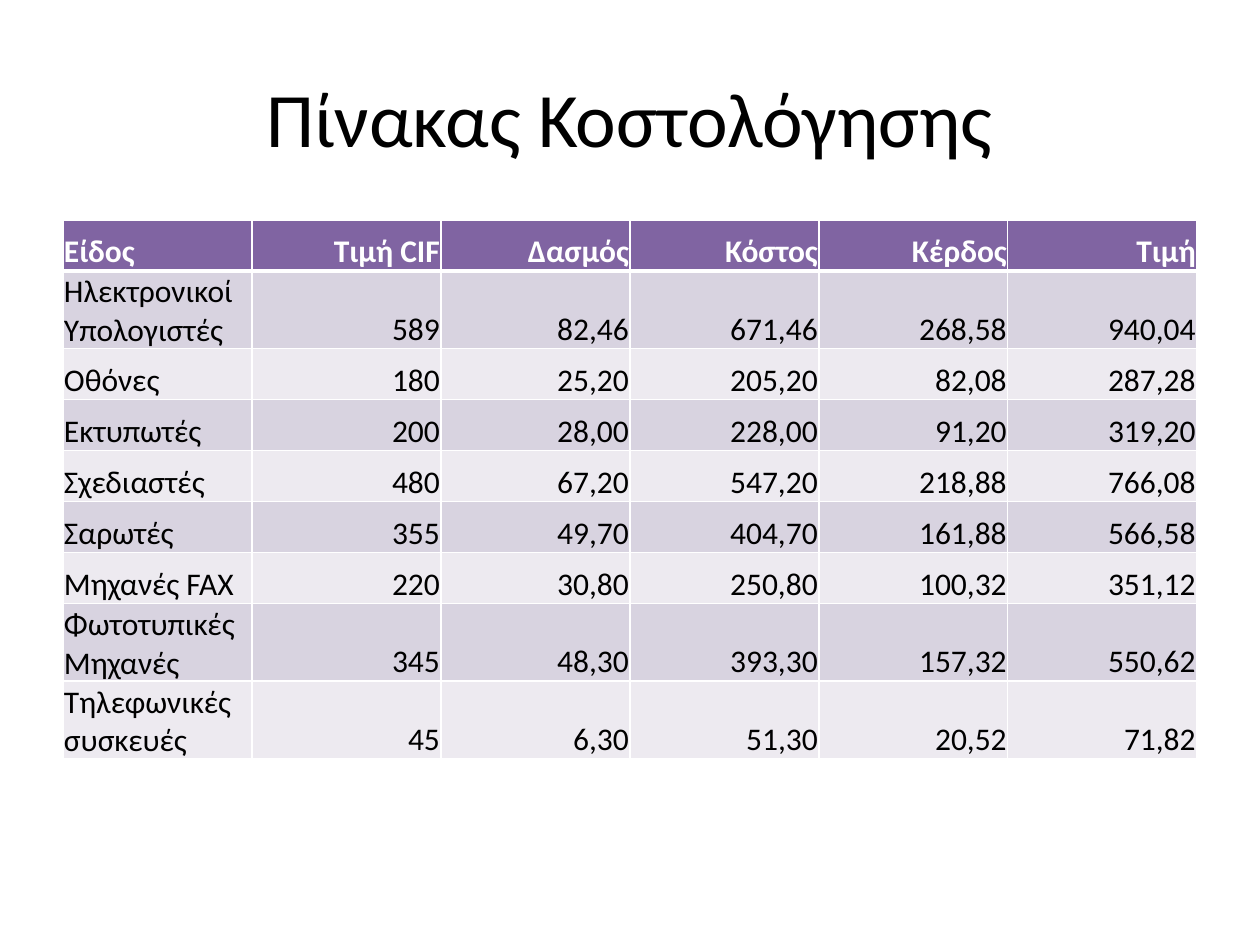
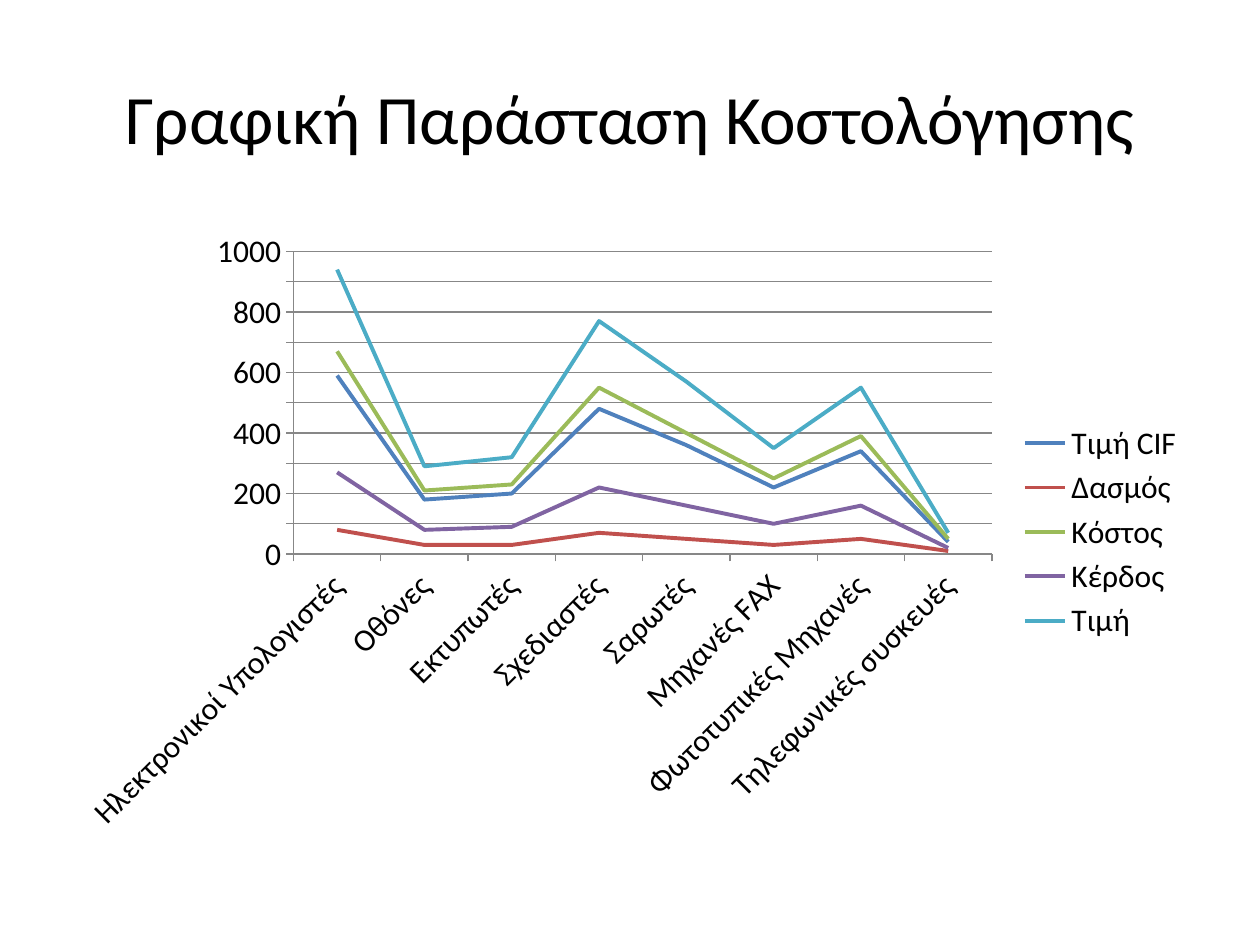
import pptx
import pptx.chart.data
import pptx.dml.color
import pptx.enum.chart
import pptx.enum.text
import pptx.oxml
import pptx.oxml.ns
import pptx.util

# Content
TABLE_TITLE = ("Πίνακας Κοστολόγησης", 44)
CHART_TITLE = ("Γραφική Παράσταση Κοστολόγησης", 39.6)
HEADERS = ["Είδος", "Τιμή CIF", "Δασμός", "Κόστος", "Κέρδος", "Τιμή"]
ITEMS = [
    ("Ηλεκτρονικοί Υπολογιστές", 589, 82.46, 671.46, 268.58, 940.04),
    ("Οθόνες", 180, 25.20, 205.20, 82.08, 287.28),
    ("Εκτυπωτές", 200, 28.00, 228.00, 91.20, 319.20),
    ("Σχεδιαστές", 480, 67.20, 547.20, 218.88, 766.08),
    ("Σαρωτές", 355, 49.70, 404.70, 161.88, 566.58),
    ("Μηχανές FAX", 220, 30.80, 250.80, 100.32, 351.12),
    ("Φωτοτυπικές Μηχανές", 345, 48.30, 393.30, 157.32, 550.62),
    ("Τηλεφωνικές συσκευές", 45, 6.30, 51.30, 20.52, 71.82),
]

# Shared style, lengths in px
FONT = "Calibri"
BLACK, WHITE, GRID = "000000", "FFFFFF", "878787"
HEAD_FILL, BANDS = "8064A2", ("D8D3E0", "EDEAF0")
SERIES_COLORS = ["4F81BD", "C0504D", "9BBB59", "8064A2", "4BACC6"]
PX = 914400 // 126
LEFT, WIDTH = 63, 1134
TITLE_TOP, TITLE_H = 38, 157
BODY_TOP, ROW_H, CHART_H = 220, 51, 624


def px(n):
    return pptx.util.Emu(n * PX)


def rgb(color):
    return pptx.dml.color.RGBColor.from_string(color)


def style_font(font, size, color=BLACK, bold=False):
    font.name, font.size, font.bold = FONT, pptx.util.Pt(size), bold
    font.color.rgb = rgb(color)


def add_titled_slide(prs, title, size):
    slide = prs.slides.add_slide(prs.slide_layouts[6])
    box = slide.shapes.add_textbox(px(LEFT), px(TITLE_TOP), px(WIDTH), px(TITLE_H))
    tf = box.text_frame
    tf.word_wrap = True
    tf.vertical_anchor = pptx.enum.text.MSO_ANCHOR.MIDDLE
    tf.text = title
    p = tf.paragraphs[0]
    p.alignment = pptx.enum.text.PP_ALIGN.CENTER
    style_font(p.runs[0].font, size)
    return slide


def set_borders(cell, top, bottom):
    tcPr = cell._tc.get_or_add_tcPr()
    sides = {"lnL": 1, "lnR": 1, "lnT": top, "lnB": bottom}
    for i, (tag, width) in enumerate(sides.items()):
        tcPr.insert(i, pptx.oxml.parse_xml(
            f'<a:{tag} {pptx.oxml.ns.nsdecls("a")} w="{pptx.util.Pt(width)}">'
            f'<a:solidFill><a:srgbClr val="{WHITE}"/></a:solidFill></a:{tag}>'))


def display(value):
    return f"{value:.2f}".replace(".", ",") if isinstance(value, float) else str(value)


def fill_cell(cell, value, row, col):
    head = row == 0
    cell.margin_left = cell.margin_right = px(1)
    cell.margin_top = px(2)
    cell.margin_bottom = 0
    cell.vertical_anchor = pptx.enum.text.MSO_ANCHOR.BOTTOM
    cell.fill.solid()
    cell.fill.fore_color.rgb = rgb(HEAD_FILL if head else BANDS[(row - 1) % 2])
    set_borders(cell, 3 if row == 1 else 1, 3 if head else 1)
    p = cell.text_frame.paragraphs[0]
    p.text = display(value)
    align = pptx.enum.text.PP_ALIGN
    p.alignment = align.RIGHT if col else align.LEFT
    style_font(p.runs[0].font, 18, WHITE if head else BLACK, head)


def add_cost_table(slide):
    rows = [HEADERS, *ITEMS]
    table = slide.shapes.add_table(len(rows), len(HEADERS), px(LEFT), px(BODY_TOP),
                                   px(WIDTH), px(ROW_H * len(rows))).table
    table.first_row = table.horz_banding = False
    for r, values in enumerate(rows):
        for c, value in enumerate(values):
            fill_cell(table.cell(r, c), value, r, c)


def add_cost_chart(slide):
    names, *columns = zip(*ITEMS)
    data = pptx.chart.data.CategoryChartData()
    data.categories = names
    for header, column in zip(HEADERS[1:], columns):
        # The axis can be read to the nearest ten
        data.add_series(header, [int(round(value, -1)) for value in column])
    chart = slide.shapes.add_chart(
        pptx.enum.chart.XL_CHART_TYPE.LINE, px(LEFT), px(BODY_TOP),
        px(WIDTH), px(CHART_H), data).chart
    style_font(chart.font, 18)
    chart.has_title = False
    chart.has_legend = True
    chart.legend.position = pptx.enum.chart.XL_LEGEND_POSITION.RIGHT
    chart.legend.include_in_layout = False

    # Axes and gridlines
    chart.value_axis.has_major_gridlines = True
    for part in (chart.category_axis, chart.value_axis, chart.value_axis.major_gridlines):
        part.format.line.color.rgb = rgb(GRID)
        part.format.line.width = pptx.util.Pt(0.75)
    for axis in (chart.category_axis, chart.value_axis):
        axis.major_tick_mark = pptx.enum.chart.XL_TICK_MARK.OUTSIDE

    # Lines
    chart.plots[0].vary_by_categories = False
    for series, color in zip(chart.plots[0].series, SERIES_COLORS):
        series.smooth = False
        series.marker.style = pptx.enum.chart.XL_MARKER_STYLE.NONE
        series.format.line.color.rgb = rgb(color)
        series.format.line.width = pptx.util.Pt(2.25)


def main():
    prs = pptx.Presentation()
    prs.slide_width, prs.slide_height = px(1260), px(945)
    add_cost_table(add_titled_slide(prs, *TABLE_TITLE))
    add_cost_chart(add_titled_slide(prs, *CHART_TITLE))
    prs.save("out.pptx")


if __name__ == "__main__":
    main()
